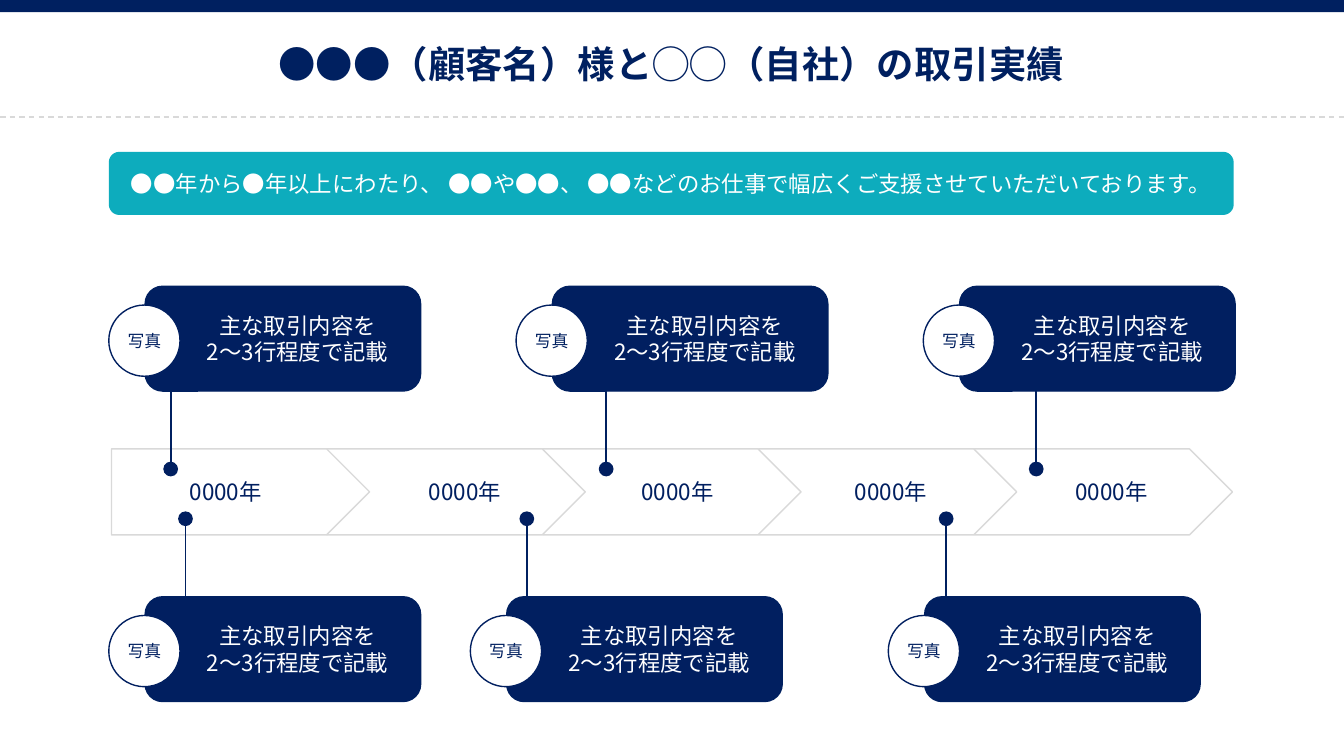
"""Build a slide that shows the history of business with a customer."""

from dataclasses import dataclass

from lxml.etree import SubElement
from pptx import Presentation
from pptx.dml.color import RGBColor
from pptx.enum.dml import MSO_LINE
from pptx.enum.shapes import MSO_CONNECTOR, MSO_SHAPE
from pptx.enum.text import MSO_ANCHOR, MSO_AUTO_SIZE, PP_ALIGN
from pptx.oxml.ns import qn
from pptx.shapes.autoshape import Shape
from pptx.shapes.connector import Connector
from pptx.slide import Slide
from pptx.util import Inches, Pt

FONT = "Noto Sans CJK JP"
COLORS = {
    "navy": "011F60",
    "outline": "002060",
    "teal": "0DACBD",
    "gray": "D9D9D9",
    "white": "FFFFFF",
}
SLIDE_WIDTH = 10
SLIDE_HEIGHT = SLIDE_WIDTH * 9 / 16
STEP_COUNT = 5
FIRST_STEP, LAST_STEP = 0.83, 7.25
STEP_PITCH = (LAST_STEP - FIRST_STEP) / (STEP_COUNT - 1)
YEAR_LEFTS = (1.31, 3.09, 4.67, 6.26, 7.9)
DOT_SIZE = 0.11


@dataclass(frozen=True)
class Box:
    """Hold a position and a size in inches."""

    left: float
    top: float
    width: float
    height: float

    def lengths(self) -> tuple[Inches, Inches, Inches, Inches]:
        """Return the four values as lengths."""
        return (Inches(self.left), Inches(self.top), Inches(self.width), Inches(self.height))


@dataclass(frozen=True)
class Deal:
    """Hold the card position and the pin that ties it to the timeline."""

    left: float
    top: float
    pin_x: float
    pin_start: float
    pin_end: float


UPPER_DEALS = [
    Deal(0.81 + 3.03 * index, 2.13, pin_x, 2.88, 3.49)
    for index, pin_x in enumerate((1.27, 4.51, 7.71))
]
LOWER_DEALS = [
    Deal(left, 4.44, pin_x, 4.47, 3.86)
    for left, pin_x in ((0.81, 1.38), (3.5, 3.92), (6.61, 7.04))
]


def color(name: str) -> RGBColor:
    """Return a named colour."""
    return RGBColor.from_string(COLORS[name])


def add_box(slide: Slide, kind: MSO_SHAPE, box: Box, fill: str, line: str | None = None) -> Shape:
    """Add a filled shape with an optional thin outline."""
    shape = slide.shapes.add_shape(kind, *box.lengths())
    shape.shadow.inherit = False
    shape.fill.solid()
    shape.fill.fore_color.rgb = color(fill)
    if line:
        shape.line.color.rgb = color(line)
        shape.line.width = Pt(0.75)
    else:
        shape.line.fill.background()
    return shape


def add_line(slide: Slide, start: tuple[float, float], end: tuple[float, float],
             line: str, width: float) -> Connector:
    """Add a straight line without a shadow."""
    points = [Inches(value) for value in (*start, *end)]
    connector = slide.shapes.add_connector(MSO_CONNECTOR.STRAIGHT, *points)
    connector.line.color.rgb = color(line)
    connector.line.width = Pt(width)
    SubElement(connector._element.spPr, qn("a:effectLst"))
    return connector


def write_text(shape: Shape, text: str, *, size: float = 12, fill: str = "white",
               bold: bool = False, wrap: bool = True) -> None:
    """Write centred paragraphs, one for each line of the text."""
    frame = shape.text_frame
    frame.text = text
    frame.word_wrap = wrap
    frame.auto_size = MSO_AUTO_SIZE.NONE
    frame.vertical_anchor = MSO_ANCHOR.TOP
    for paragraph in frame.paragraphs:
        paragraph.alignment = PP_ALIGN.CENTER
        for run in paragraph.runs:
            run.font.size = Pt(size)
            run.font.bold = bold
            run.font.name = FONT
            run.font.color.rgb = color(fill)
            SubElement(run.font._element, qn("a:ea")).set("typeface", FONT)


def add_label(slide: Slide, box: Box, text: str, **text_format) -> None:
    """Add a text box with formatted text."""
    write_text(slide.shapes.add_textbox(*box.lengths()), text, **text_format)


def add_header(slide: Slide) -> None:
    """Add the top band, the title and the dashed rule."""
    add_box(slide, MSO_SHAPE.RECTANGLE, Box(0, 0, SLIDE_WIDTH, 0.09), "outline")
    title = slide.shapes.title
    title.left, title.top, title.width, title.height = Box(1.95, 0.26, 6.09, 0.44).lengths()
    write_text(title, "●●●（顧客名）様と◯◯（自社）の取引実績", size=20, fill="outline", bold=True)
    rule = add_line(slide, (0, 0.87), (SLIDE_WIDTH, 0.87), "gray", 0.75)
    rule.line.dash_style = MSO_LINE.DASH


def add_summary(slide: Slide) -> None:
    """Add the teal summary banner."""
    add_box(slide, MSO_SHAPE.ROUNDED_RECTANGLE, Box(0.81, 1.13, 8.37, 0.47), "teal")
    add_label(slide, Box(0.81, 1.22, 8.37, 0.3),
              "●●年から●年以上にわたり、 ●●や●●、 ●●などのお仕事で幅広くご支援させていただいております。")


def add_timeline(slide: Slide) -> None:
    """Add the overlapping steps from right to left, then the years."""
    for index in reversed(range(STEP_COUNT)):
        step = Box(FIRST_STEP + STEP_PITCH * index, 3.34, 1.92, 0.64)
        add_box(slide, MSO_SHAPE.PENTAGON, step, "white", "gray")
    for left in YEAR_LEFTS:
        add_label(slide, Box(left, 3.51, 0.74, 0.3), "0000年", fill="navy")


def add_deal(slide: Slide, deal: Deal) -> None:
    """Add one card with its photo circle and its pin."""
    left, top = deal.left, deal.top
    add_box(slide, MSO_SHAPE.ROUNDED_RECTANGLE, Box(left + 0.27, top, 2.05, 0.78),
            "navy", "outline")
    add_label(slide, Box(left + 0.62, top + 0.14, 1.57, 0.5),
              "主な取引内容を\n2〜3行程度で記載")
    add_box(slide, MSO_SHAPE.OVAL, Box(left, top + 0.14, 0.53, 0.53), "white", "navy")
    add_label(slide, Box(left + 0.04, top + 0.28, 0.45, 0.25), "写真",
              size=9, fill="outline", wrap=False)
    add_line(slide, (deal.pin_x, deal.pin_start), (deal.pin_x, deal.pin_end), "outline", 1)
    radius = DOT_SIZE / 2
    add_box(slide, MSO_SHAPE.OVAL,
            Box(deal.pin_x - radius, deal.pin_end - radius, DOT_SIZE, DOT_SIZE), "navy")


def main() -> None:
    """Build and save the presentation."""
    presentation = Presentation()
    presentation.slide_width = Inches(SLIDE_WIDTH)
    presentation.slide_height = Inches(SLIDE_HEIGHT)
    slide = presentation.slides.add_slide(presentation.slide_layouts[5])
    add_header(slide)
    add_summary(slide)
    add_timeline(slide)
    for deal in UPPER_DEALS + LOWER_DEALS:
        add_deal(slide, deal)
    presentation.save("out.pptx")


if __name__ == "__main__":
    main()
